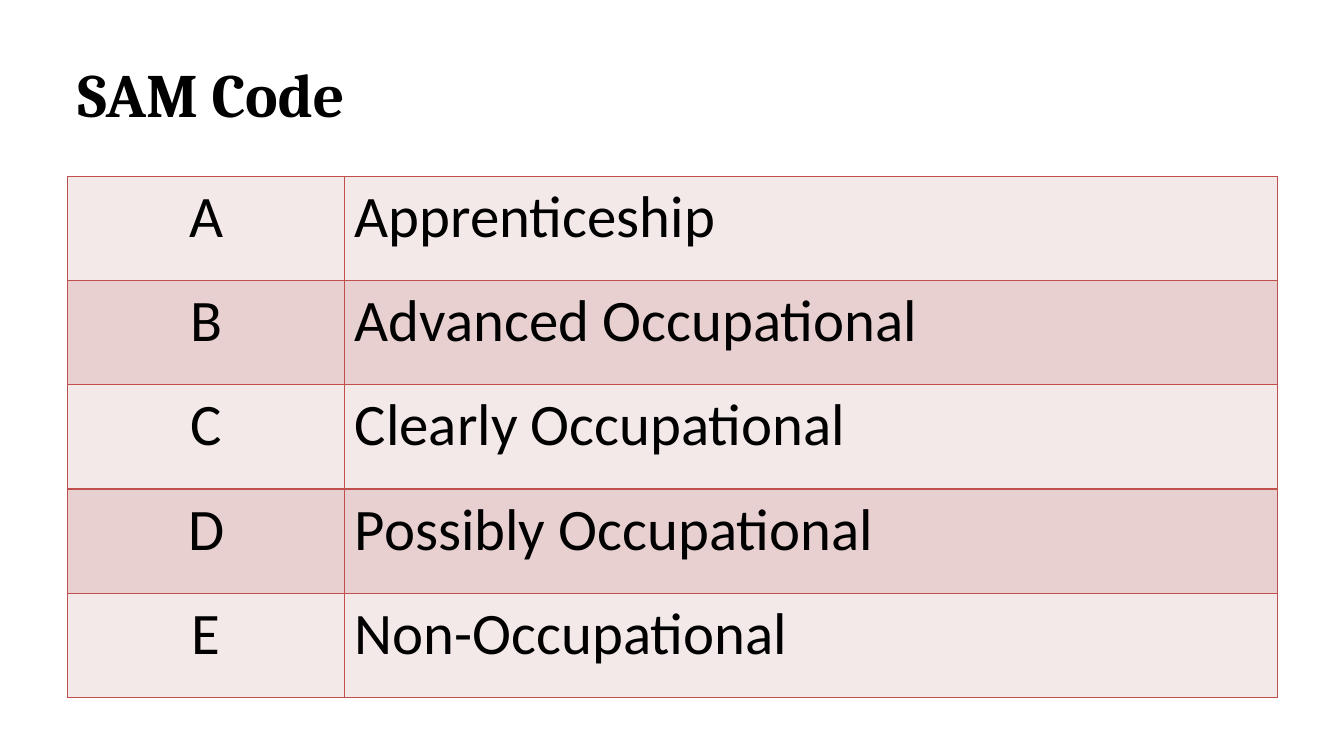
import pptx
import pptx.util
import pptx.dml.color
import pptx.enum.text
import pptx.oxml
import pptx.oxml.ns
from dataclasses import dataclass
from lxml import etree

PX = 9144
ALIGN = pptx.enum.text.PP_ALIGN
ANCHOR = pptx.enum.text.MSO_ANCHOR
CODES = [
    ("A", "Apprenticeship"),
    ("B", "Advanced Occupational"),
    ("C", "Clearly Occupational"),
    ("D", "Possibly Occupational"),
    ("E", "Non-Occupational"),
]


@dataclass(frozen=True)
class Theme:
    """Colours, fonts and sizes of the slide."""
    ink: str = "000000"
    rule: str = "C0504D"
    bands: tuple = ("F4E9E9", "E8D0D0")
    head: str = "Cambria"
    body: str = "Calibri"
    head_size: int = 44
    body_size: int = 42


THEME = Theme()


def px(count):
    """Turn px into EMU."""
    return pptx.util.Emu(count * PX)


def rgb(code):
    """Turn a hex code into a colour."""
    return pptx.dml.color.RGBColor.from_string(code)


def style(para, face, size, bold, align):
    """Set the font and alignment of a paragraph."""
    para.alignment = align
    para.font.name = face
    para.font.size = pptx.util.Pt(size)
    para.font.bold = bold
    para.font.color.rgb = rgb(THEME.ink)


def edge(cell):
    """Draw a thin rule on all four sides of a cell."""
    props = cell._tc.get_or_add_tcPr()
    for spot, side in enumerate(("lnL", "lnR", "lnT", "lnB")):
        line = etree.Element(pptx.oxml.ns.qn("a:" + side), w=str(pptx.util.Pt(1)))
        fill = etree.SubElement(line, pptx.oxml.ns.qn("a:solidFill"))
        etree.SubElement(fill, pptx.oxml.ns.qn("a:srgbClr"), val=THEME.rule)
        props.insert(spot, line)


def add_title(slide, text, left, top, width, height):
    """Place and format the title in its box."""
    title = slide.shapes.title
    title.left, title.top = px(left), px(top)
    title.width, title.height = px(width), px(height)
    frame = title.text_frame
    frame.text = text
    frame.vertical_anchor = ANCHOR.MIDDLE
    style(frame.paragraphs[0], THEME.head, THEME.head_size, True, ALIGN.LEFT)


def add_codes(slide, codes, left, top, width, height, first):
    """Place the table of codes, its first column being of the given width."""
    table = slide.shapes.add_table(
        len(codes), 2, px(left), px(top), px(width), px(height)).table
    table.first_row = table.horz_banding = False
    table.columns[0].width = px(first)
    table.columns[1].width = px(width - first)
    for row, texts in enumerate(codes):
        for col, text in enumerate(texts):
            cell = table.cell(row, col)
            cell.text = text
            cell.fill.solid()
            cell.fill.fore_color.rgb = rgb(THEME.bands[row % 2])
            edge(cell)
            align = ALIGN.LEFT if col else ALIGN.CENTER
            style(cell.text_frame.paragraphs[0], THEME.body,
                  THEME.body_size, False, align)


def main():
    """Build the slide and save it."""
    deck = pptx.Presentation()
    deck.slide_width, deck.slide_height = px(1333), px(750)
    slide = deck.slides.add_slide(deck.slide_layouts[5])
    add_title(slide, "SAM Code", 67, 30, 1200, 125)
    add_codes(slide, CODES, 67, 175, 1200, 517, 275)
    deck.save("out.pptx")


if __name__ == "__main__":
    main()
